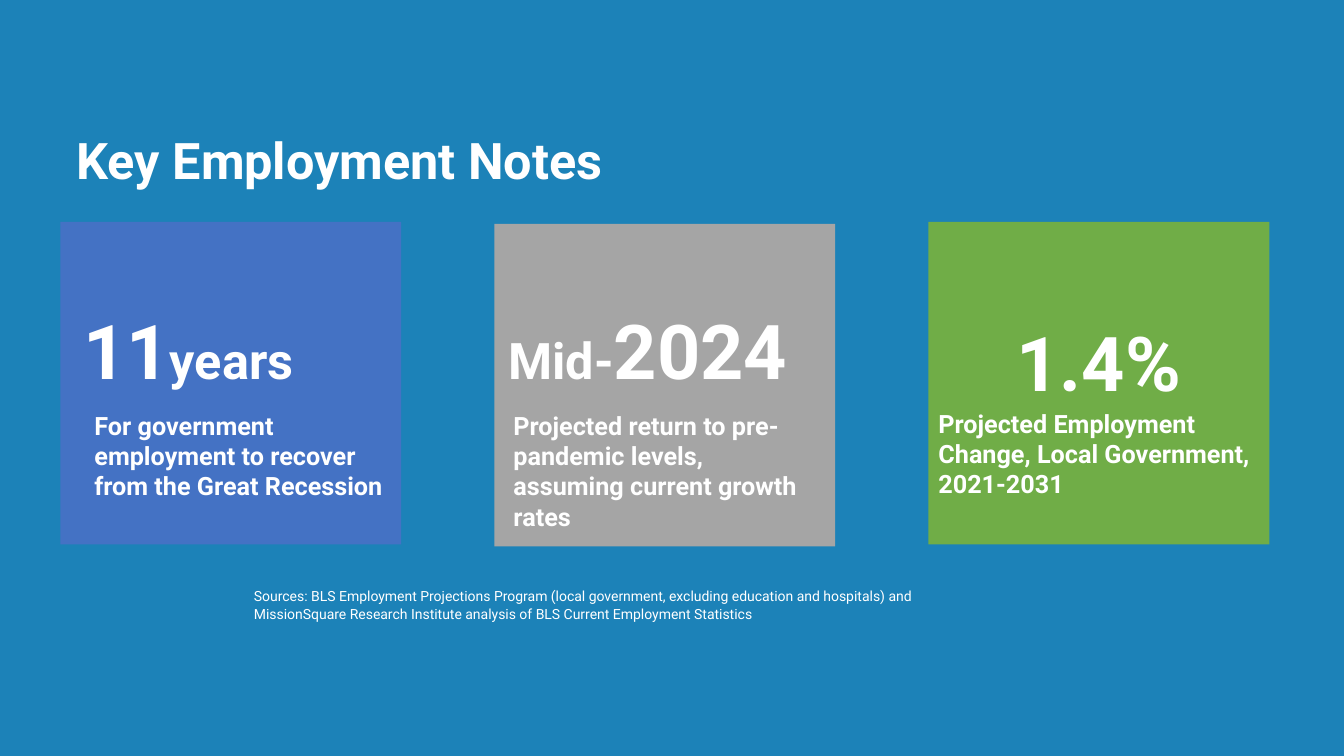
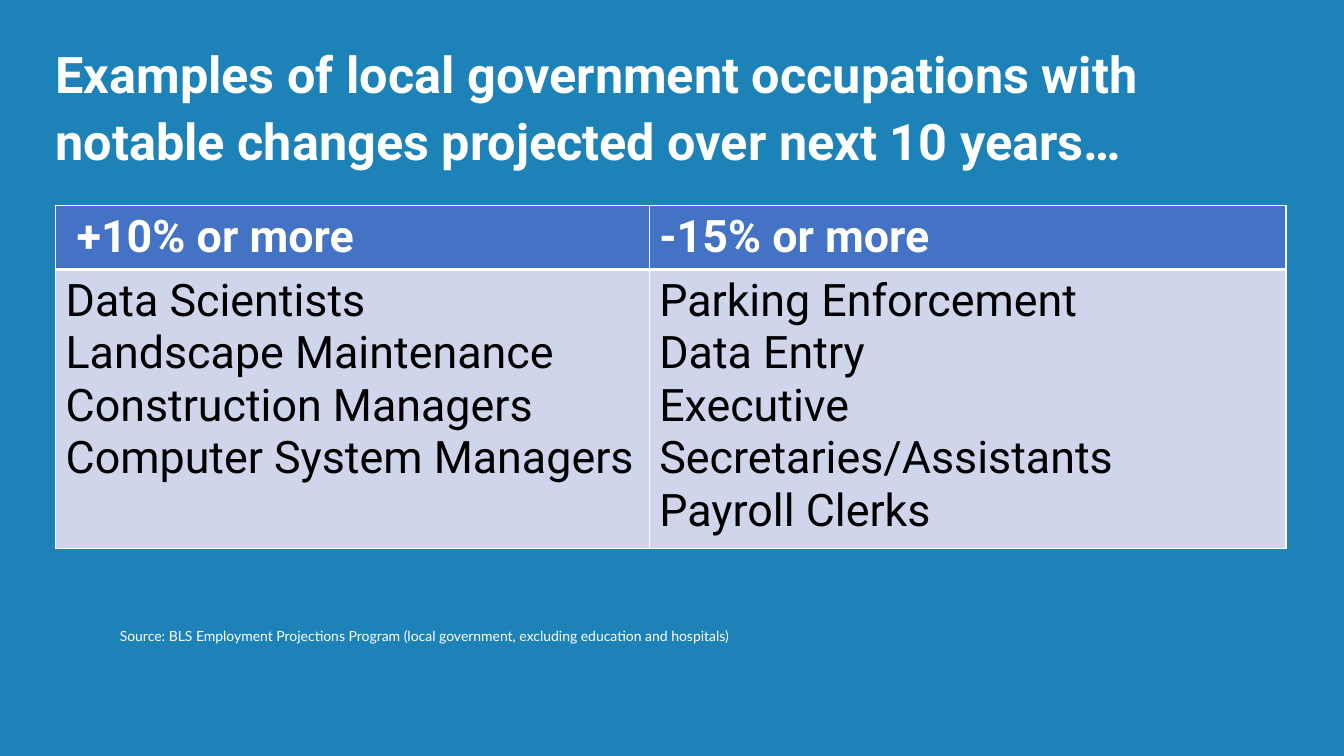
from dataclasses import dataclass

from lxml.etree import SubElement
from pptx import Presentation
from pptx.dml.color import RGBColor
from pptx.enum.shapes import MSO_SHAPE
from pptx.enum.text import MSO_ANCHOR, PP_ALIGN
from pptx.oxml.ns import qn
from pptx.util import Cm, Pt

BLUE_GROUND = RGBColor(0x1C, 0x82, 0xB8)
WHITE = RGBColor(0xFF, 0xFF, 0xFF)
BLACK = RGBColor(0, 0, 0)
ROYAL = RGBColor(0x44, 0x72, 0xC4)
GREY = RGBColor(0xA5, 0xA5, 0xA5)
GREEN = RGBColor(0x70, 0xAD, 0x47)
PALE = RGBColor(0xCF, 0xD5, 0xEA)

# Text formats shared by the slides
TITLE = {"name": "Roboto", "size": Pt(36), "bold": True}
LABEL = {"name": "Roboto", "size": Pt(18), "bold": True}
SOURCE = {"name": "Roboto", "size": Pt(10), "bold": False}
HEADING = {"name": "Roboto", "size": Pt(32), "bold": True}
ENTRY = {**HEADING, "bold": False}

CARD_WIDTH, CARD_HEIGHT, CARD_PITCH = 8.59, 8.13, 10.94
CARDS_LEFT = 1.52


@dataclass
class Card:
    top: float
    color: RGBColor
    figure: list          # (text, points) pairs
    figure_offset: tuple  # from the card's top left corner, in cm
    label: str
    label_offset: tuple
    label_width: float


CARDS = [
    Card(5.59, ROYAL, [("11", 54), ("years", 36)], (-1.07, 2.06),
         "For government employment to recover from the Great Recession",
         (0.86, 4.75), 7.37),
    Card(5.64, GREY, [("Mid-", 36), ("2024", 54)], (-0.43, 2.01),
         "Projected return to pre-pandemic levels, assuming current growth rates",
         (0.48, 4.7), 7.37),
    Card(5.59, GREEN, [("1.4%", 54)], (0, 2.36),
         "Projected Employment Change, Local Government, 2021-2031",
         (0.25, 4.7), 8.03),
]

OCCUPATIONS = {
    "+10% or more": ["Data Scientists", "Landscape Maintenance",
                     "Construction Managers", "Computer System Managers"],
    "-15% or more": ["Parking Enforcement", "Data Entry",
                     "Executive Secretaries/Assistants", "Payroll Clerks"],
}


def style_font(font, style, color=WHITE):
    for attribute, value in style.items():
        setattr(font, attribute, value)
    font.color.rgb = color


def add_text_frame(slide, left, top, width, height, anchor=MSO_ANCHOR.TOP):
    box = slide.shapes.add_textbox(Cm(left), Cm(top), Cm(width), Cm(height))
    frame = box.text_frame
    settings = {"word_wrap": True, "vertical_anchor": anchor, "margin_left": 0,
                "margin_top": 0, "margin_right": 0, "margin_bottom": 0}
    for attribute, value in settings.items():
        setattr(frame, attribute, value)
    return frame


def add_run(paragraph, text, style):
    run = paragraph.add_run()
    run.text = text
    style_font(run.font, style)


def add_title(slide, text, left, top, width):
    frame = add_text_frame(slide, left, top, width, 3.3, MSO_ANCHOR.BOTTOM)
    paragraph = frame.paragraphs[0]
    paragraph.line_spacing = 1.1
    add_run(paragraph, text, TITLE)


def add_source(slide, lines, left, top, font_name="Roboto"):
    frame = add_text_frame(slide, left, top, 28.35, 0.64)
    frame.margin_left = Cm(0.25)
    paragraph = frame.paragraphs[0]
    paragraph.line_spacing = 1.1
    for index, line in enumerate(lines):
        if index:
            paragraph.add_line_break()
        add_run(paragraph, line, {**SOURCE, "name": font_name})


def add_card(slide, card, left):
    panel = slide.shapes.add_shape(MSO_SHAPE.RECTANGLE, Cm(left), Cm(card.top),
                                   Cm(CARD_WIDTH), Cm(CARD_HEIGHT))
    panel.shadow.inherit = False
    panel.fill.solid()
    panel.fill.fore_color.rgb = card.color
    panel.line.fill.background()

    # Large figure
    dx, dy = card.figure_offset
    figure = add_text_frame(slide, left + dx, card.top + dy, CARD_WIDTH, 2.31).paragraphs[0]
    figure.alignment = PP_ALIGN.CENTER
    for text, points in card.figure:
        add_run(figure, text, {**LABEL, "size": Pt(points)})

    # Explanation below it
    dx, dy = card.label_offset
    label = add_text_frame(slide, left + dx, card.top + dy, card.label_width, 3.07)
    add_run(label.paragraphs[0], card.label, LABEL)


def set_borders(cell, widths):
    """Draw white borders; widths are points for left, right, top, bottom."""
    properties = cell._tc.get_or_add_tcPr()
    for position, (side, width) in enumerate(zip("LRTB", widths)):
        line = SubElement(properties, qn(f"a:ln{side}"), w=str(Pt(width)))
        fill = SubElement(line, qn("a:solidFill"))
        SubElement(fill, qn("a:srgbClr"), val=str(WHITE))
        properties.insert(position, line)


def fill_cell(cell, lines, style, text_color, ground, borders):
    cell.fill.solid()
    cell.fill.fore_color.rgb = ground
    set_borders(cell, borders)
    cell.text = "\n".join(lines)
    for paragraph in cell.text_frame.paragraphs:
        style_font(paragraph.runs[0].font, style, text_color)


def add_occupations(slide, left, top, column_widths, row_heights):
    table = slide.shapes.add_table(
        2, len(OCCUPATIONS), Cm(left), Cm(top),
        Cm(sum(column_widths)), Cm(sum(row_heights))).table
    for row, height in zip(table.rows, row_heights):
        row.height = Cm(height)
    for index, (heading, entries) in enumerate(OCCUPATIONS.items()):
        table.columns[index].width = Cm(column_widths[index])
        fill_cell(table.cell(0, index), [heading], HEADING, WHITE, ROYAL, (1, 1, 1, 3))
        fill_cell(table.cell(1, index), entries, ENTRY, BLACK, PALE, (1, 1, 3, 1))
    table.cell(0, 0).margin_left = Cm(0.53)


def build_notes_slide(slide):
    add_title(slide, "Key Employment Notes", 1.93, 1.47, 28.32)
    for index, card in enumerate(CARDS):
        add_card(slide, card, CARDS_LEFT + index * CARD_PITCH)
    add_source(slide, [
        "Sources: BLS Employment Projections Program "
        "(local government, excluding education and hospitals) and",
        "MissionSquare Research Institute analysis of BLS Current Employment Statistics",
    ], 6.15, 14.76)


def build_occupations_slide(slide):
    add_title(slide, "Examples of local government occupations with notable changes "
                     "projected over next 10 years…", 1.4, 0.99, 30.48)
    add_occupations(slide, 1.4, 5.18, (14.96, 16.05), (1.58, 6.86))
    add_source(slide, ["Source: BLS Employment Projections Program "
                       "(local government, excluding education and hospitals)"],
               2.77, 15.77, "Lato")


def main():
    deck = Presentation()
    deck.slide_width, deck.slide_height = Cm(33.87), Cm(19.05)
    ground = deck.slide_master.background.fill
    ground.solid()
    ground.fore_color.rgb = BLUE_GROUND
    for build in (build_notes_slide, build_occupations_slide):
        build(deck.slides.add_slide(deck.slide_layouts[6]))
    deck.save("out.pptx")


if __name__ == "__main__":
    main()
